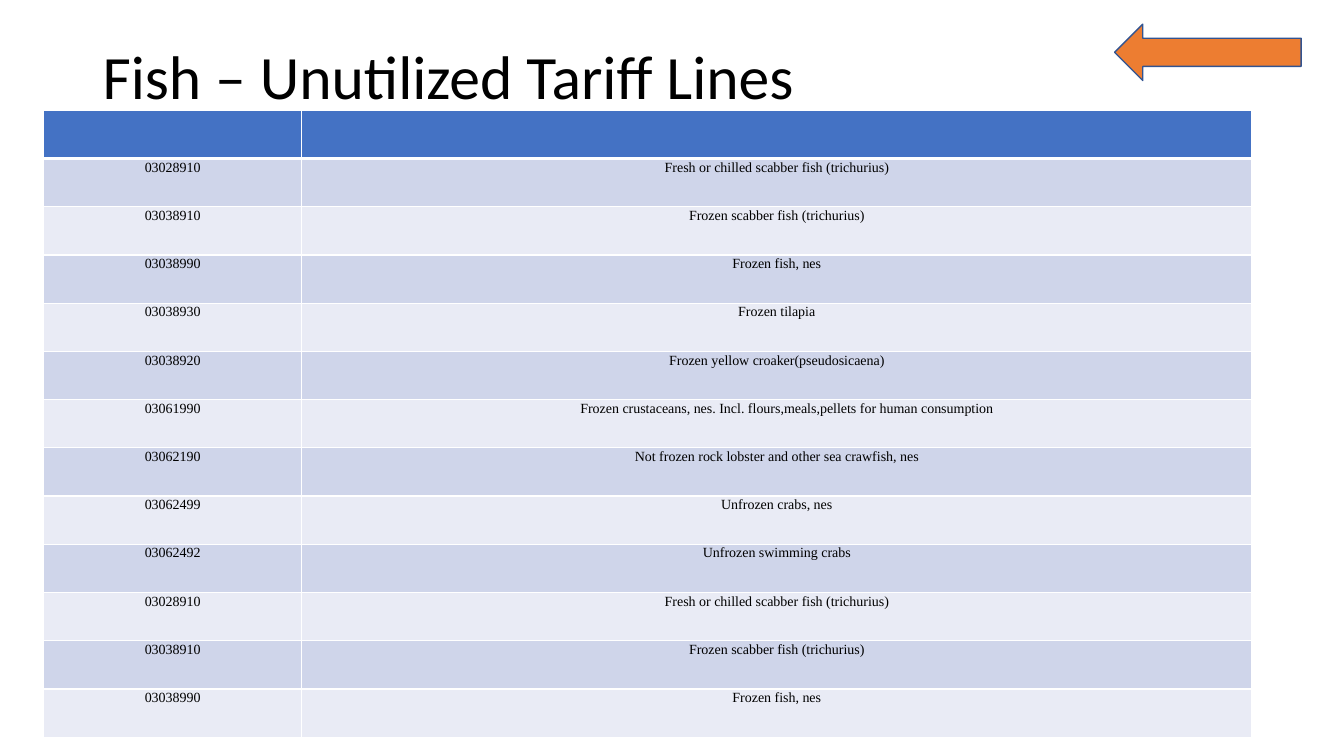
from lxml import etree
from pptx import Presentation
from pptx.dml.color import RGBColor
from pptx.enum.shapes import MSO_SHAPE
from pptx.enum.text import MSO_ANCHOR, MSO_AUTO_SIZE, PP_ALIGN
from pptx.oxml.ns import qn
from pptx.util import Cm, Pt

LEFT, CENTER = PP_ALIGN.LEFT, PP_ALIGN.CENTER
MIDDLE = MSO_ANCHOR.MIDDLE
NO_FIT = MSO_AUTO_SIZE.NONE
LEFT_ARROW = MSO_SHAPE.LEFT_ARROW
TITLE_ONLY = 5

BLACK, WHITE = "000000", "FFFFFF"
HEADER_FILL = "4472C4"
BAND_FILLS = ("CFD5EA", "E9EBF5")
ARROW_FILL, ARROW_LINE = "ED7D31", "325491"

CODE_SHARE = 0.2135
TARIFF_LINES = [
    ("03028910", "Fresh or chilled scabber fish (trichurius)"),
    ("03038910", "Frozen scabber fish (trichurius)"),
    ("03038990", "Frozen fish, nes"),
    ("03038930", "Frozen tilapia"),
    ("03038920", "Frozen yellow croaker(pseudosicaena)"),
    ("03061990", "Frozen crustaceans, nes. Incl. flours,meals,pellets for human consumption"),
    ("03062190", "Not frozen rock lobster and other sea crawfish, nes"),
    ("03062499", "Unfrozen crabs, nes"),
    ("03062492", "Unfrozen swimming crabs"),
    ("03028910", "Fresh or chilled scabber fish (trichurius)"),
    ("03038910", "Frozen scabber fish (trichurius)"),
    ("03038990", "Frozen fish, nes"),
]
INDENTED_CODE = "03061990"


def color(value):
    return RGBColor.from_string(value)


def style_paragraph(para, font_name, size, alignment):
    para.alignment = alignment
    para.font.name = font_name
    para.font.size = Pt(size)
    para.font.color.rgb = color(BLACK)


def add_title(page, box, text):
    title = page.shapes.title
    title.left, title.top, title.width, title.height = box
    frame = title.text_frame
    frame.text = text
    frame.auto_size = NO_FIT
    frame.vertical_anchor = MIDDLE
    para = frame.paragraphs[0]
    style_paragraph(para, "Calibri", 44, LEFT)
    para.line_spacing = 0.9


def set_borders(cell, top=1, bottom=1):
    properties = cell._tc.get_or_add_tcPr()
    for side, width in (("L", 1), ("R", 1), ("T", top), ("B", bottom)):
        line = etree.SubElement(properties, qn(f"a:ln{side}"), w=str(Pt(width)))
        fill = etree.SubElement(line, qn("a:solidFill"))
        etree.SubElement(fill, qn("a:srgbClr"), val=WHITE)


def fill_cell(cell, value):
    cell.fill.solid()
    cell.fill.fore_color.rgb = color(value)


def write_cell(cell, text, indent):
    cell.margin_left = Cm(indent)
    cell.margin_top = cell.margin_right = Cm(0.03)
    cell.margin_bottom = 0
    cell.text = text
    style_paragraph(cell.text_frame.paragraphs[0], "Times New Roman", 10, CENTER)


def add_tariff_table(page, box, lines):
    row_count = len(lines) + 1
    table = page.shapes.add_table(row_count, 2, *box).table
    width, height = box[2:]
    table.columns[0].width = int(width * CODE_SHARE)
    table.columns[1].width = width - table.columns[0].width
    for row in table.rows:
        row.height = height // row_count
    for cell in table.rows[0].cells:
        set_borders(cell, bottom=3)
        fill_cell(cell, HEADER_FILL)
    for index, line in enumerate(lines):
        for column, text in enumerate(line):
            cell = table.cell(index + 1, column)
            set_borders(cell, top=1 if index else 3)
            fill_cell(cell, BAND_FILLS[index % 2])
            indented = column == 1 and line[0] == INDENTED_CODE
            write_cell(cell, text, 0.53 if indented else 0.03)


def add_back_arrow(page, box):
    arrow = page.shapes.add_shape(LEFT_ARROW, *box)
    arrow.shadow.inherit = False
    arrow.fill.solid()
    arrow.fill.fore_color.rgb = color(ARROW_FILL)
    arrow.line.color.rgb = color(ARROW_LINE)
    arrow.line.width = Pt(1)


def main():
    deck = Presentation()
    deck.slide_width, deck.slide_height = Cm(33.87), Cm(19.05)
    page = deck.slides.add_slide(deck.slide_layouts[TITLE_ONLY])
    add_title(page, (Cm(2.33), Cm(1.01), Cm(29.21), Cm(1.98)),
              "Fish – Unutilized Tariff Lines")
    add_tariff_table(page, (Cm(1.1), Cm(2.78), Cm(30.45), Cm(15.8)), TARIFF_LINES)
    add_back_arrow(page, (Cm(28.09), Cm(0.61), Cm(4.7), Cm(1.42)))
    deck.save("out.pptx")


if __name__ == "__main__":
    main()
